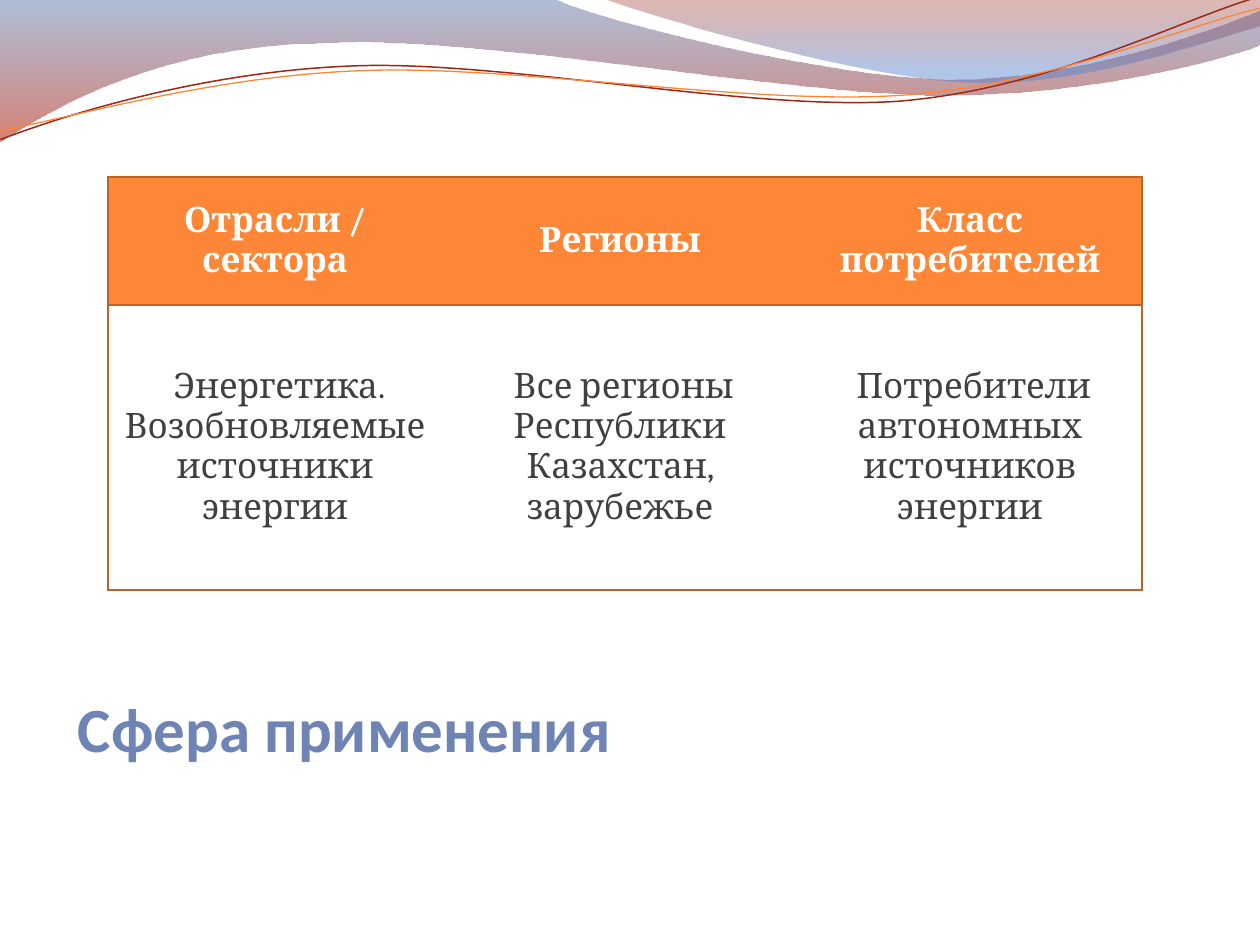
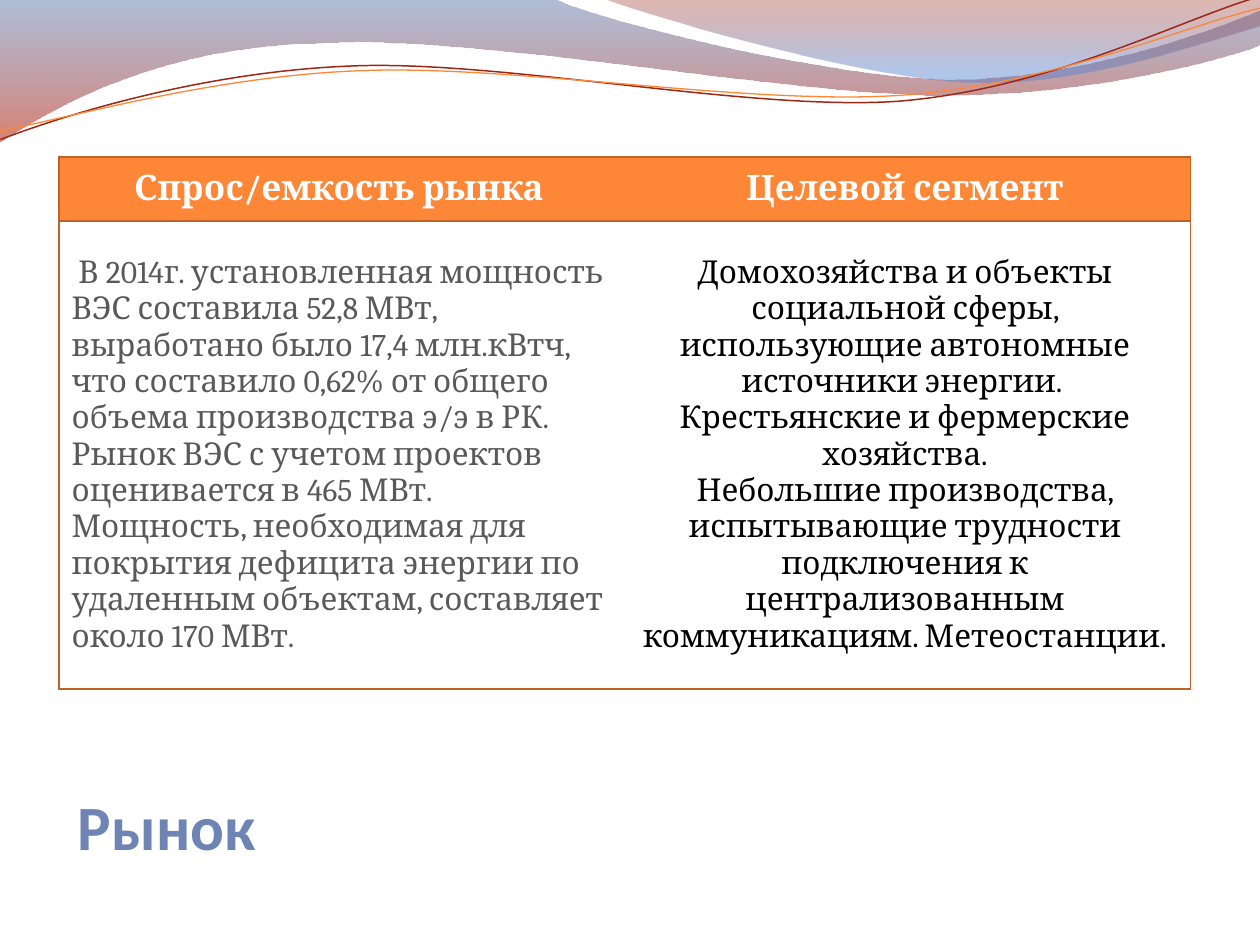
"""Build two slides on the field of application and the market of wind power."""
from lxml import etree
from pptx import Presentation
from pptx import util as u
from pptx.dml.color import RGBColor
from pptx.enum import text
from pptx.oxml import ns

PX = 914400 / 126

WHITE = RGBColor(0xFF, 0xFF, 0xFF)
BLACK = RGBColor(0x00, 0x00, 0x00)
DARK_GREY = RGBColor(0x40, 0x40, 0x40)
MID_GREY = RGBColor(0x59, 0x59, 0x59)
ORANGE = RGBColor(0xFE, 0x86, 0x37)
BORDER = RGBColor(0xBE, 0x63, 0x26)
TITLE_BLUE = RGBColor(0x6E, 0x84, 0xB4)
BAND_BLUE = RGBColor(0x4F, 0x6E, 0xA8)
BAND_RED = RGBColor(0xB6, 0x1A, 0x00)
CREST_RED = RGBColor(0x95, 0x15, 0x00)
CREST_BLUE = RGBColor(0x56, 0x81, 0xD1)
DARK_STRAND = RGBColor(0x9E, 0x27, 0x13)

LEFT, CENTER = text.PP_ALIGN.LEFT, text.PP_ALIGN.CENTER
MIDDLE, BOTTOM = text.MSO_ANCHOR.MIDDLE, text.MSO_ANCHOR.BOTTOM

STRAND_TILT = 357.3
BAND = [
    [(0, 0)], [(554, -1)],
    [(600, 21), (837, 79), (955, 79)],
    [(1075, 79), (1207, 33), (1260, 11)],
    [(1261, 45)],
    [(1239, 55), (1096, 96), (940, 95)],
    [(784, 95), (481, 35), (324, 43)],
    [(163, 45), (58, 105), (-1, 142)],
]
CREST = [
    [(604, -1)],
    [(641, 14), (859, 78), (969, 82)],
    [(1079, 87), (1211, 40), (1260, 26)],
    [(1260, 0)],
]
DARK_CURVE = [
    [(-2, 110)],
    [(58, 90), (199, 52), (350, 53)],
    [(499, 53), (745, 117), (896, 114)],
    [(1049, 109), (1184, 45), (1260, 27)],
]
ORANGE_CURVE = [
    [(-2, 101)],
    [(57, 94), (207, 57), (357, 58)],
    [(509, 58), (750, 112), (902, 108)],
    [(1052, 104), (1187, 52), (1262, 38)],
]


def px(length):
    """Turn px into EMU."""
    return u.Emu(round(length * PX))


def bend_lines(outline, segments):
    """Merge each run of three lines into one cubic curve."""
    path = next(outline.element.iter(ns.qn("a:path")))
    lines = iter(path.findall(ns.qn("a:lnTo")))
    for segment in segments:
        run = [next(lines) for _ in segment]
        if len(run) == 3:
            curve = etree.Element(ns.qn("a:cubicBezTo"))
            run[0].addprevious(curve)
            for line in run:
                curve.append(line[0])
                path.remove(line)


def add_outline(slide, segments, close):
    """Draw an outline of straight and curved segments."""
    start, *corners = [(px(x), px(y)) for segment in segments for x, y in segment]
    builder = slide.shapes.build_freeform(*start)
    builder.add_line_segments(corners, close=close)
    outline = builder.convert_to_shape()
    bend_lines(outline, segments[1:])
    outline.shadow.inherit = False
    return outline


def add_wave(slide, segments, stops):
    """Fill a wave downwards with (position, colour, opacity) stops."""
    wave = add_outline(slide, segments, close=True)
    wave.line.fill.background()
    wave.fill.gradient()
    wave.fill.gradient_angle = 270
    for stop, (position, colour, _) in zip(wave.fill.gradient_stops, stops):
        stop.position = position
        stop.color.rgb = colour
    tints = wave.element.iter(ns.qn("a:srgbClr"))
    for tint, (_, _, opacity) in zip(tints, stops):
        etree.SubElement(tint, ns.qn("a:alpha"), val=str(opacity * 1000))


def add_strand(slide, segments, colour, width):
    """Draw a thin, slightly tilted open curve."""
    strand = add_outline(slide, segments, close=False)
    strand.rotation = STRAND_TILT
    strand.fill.background()
    strand.line.color.rgb = colour
    strand.line.width = u.Pt(width)


def add_header_art(slide):
    """Draw the waves that every slide carries at its top."""
    add_wave(slide, BAND, [(0, BAND_BLUE, 45), (1, BAND_RED, 55)])
    add_wave(slide, CREST, [(0, CREST_RED, 30), (0.8, CREST_BLUE, 45)])
    add_strand(slide, DARK_CURVE, DARK_STRAND, 0.85)
    add_strand(slide, ORANGE_CURVE, ORANGE, 0.75)


def write(frame, words, *, size, colour, font="Cambria", bold=False, align=LEFT):
    """Fill a text frame, one paragraph for each line of words."""
    frame.word_wrap = True
    for index, line in enumerate(words.split("\n")):
        paragraph = frame.add_paragraph() if index else frame.paragraphs[0]
        paragraph.alignment = align
        run = paragraph.add_run()
        run.text = line
        run.font.name = font
        run.font.size = u.Pt(size)
        run.font.bold = bold
        run.font.color.rgb = colour


def add_title(slide, words, left, top, width, height):
    """Add the slide title, set on the bottom of its box."""
    frame = slide.shapes.add_textbox(*map(px, (left, top, width, height))).text_frame
    frame.vertical_anchor = BOTTOM
    frame.margin_left = frame.margin_right = frame.margin_bottom = 0
    frame.margin_top = px(6)
    write(frame, words, size=36, colour=TITLE_BLUE, font="Calibri", bold=True)


def set_borders(cell, sides):
    """Draw the named sides of a cell and clear the others."""
    properties = cell._tc.get_or_add_tcPr()
    for side in "LRTB":
        edge = etree.SubElement(properties, ns.qn(f"a:ln{side}"), w=str(u.Pt(0.75)))
        if side in sides:
            fill = etree.SubElement(edge, ns.qn("a:solidFill"))
            etree.SubElement(fill, ns.qn("a:srgbClr"), val=str(BORDER))
        else:
            etree.SubElement(edge, ns.qn("a:noFill"))


def add_framed_table(slide, left, top, widths, heights, headings, entries):
    """Add a table of headings above entries of (words, format)."""
    frame = slide.shapes.add_table(
        2, len(widths), px(left), px(top), px(sum(widths)), px(sum(heights)))
    table = frame.table
    table.first_row = table.horz_banding = False
    for row, height in zip(table.rows, heights):
        row.height = px(height)
    heading_format = dict(size=20, colour=WHITE, bold=True, align=CENTER)
    for index, (width, heading, entry) in enumerate(zip(widths, headings, entries)):
        table.columns[index].width = px(width)
        sides = "TB" + "L" * (index == 0) + "R" * (index == len(widths) - 1)
        for row, (words, style) in enumerate([(heading, heading_format), entry]):
            cell = table.cell(row, index)
            cell.vertical_anchor = MIDDLE
            set_borders(cell, sides)
            if row == 0:
                cell.fill.solid()
                cell.fill.fore_color.rgb = ORANGE
            else:
                cell.fill.background()
            write(cell.text_frame, words, **style)


def add_slide(deck):
    """Add a blank slide with the shared header art."""
    slide = deck.slides.add_slide(deck.slide_layouts[6])
    add_header_art(slide)
    return slide


def add_application_slide(deck):
    """Show sectors, regions and consumers."""
    slide = add_slide(deck)
    add_title(slide, "Сфера применения", 78, 640, 1024, 125)
    entry_format = dict(size=20, colour=DARK_GREY, align=CENTER)
    fields = [
        " Энергетика. Возобновляемые источники энергии",
        " Все регионы Республики Казахстан, зарубежье",
        " Потребители автономных источников энергии",
    ]
    add_framed_table(
        slide, 108, 177, [334, 356, 344], [128, 285],
        ["Отрасли / сектора", "Регионы", "Класс потребителей"],
        [(field, entry_format) for field in fields])


def add_market_slide(deck):
    """Show market capacity and the target segment."""
    slide = add_slide(deck)
    add_title(slide, "Рынок", 78, 758, 1053, 105)
    demand = (
        " В 2014г. установленная мощность ВЭС составила 52,8 МВт, выработано было "
        "17,4 млн.кВтч, что составило 0,62% от общего объема производства э/э в РК.\n"
        "Рынок ВЭС с учетом проектов оценивается в 465 МВт.\n"
        "Мощность, необходимая для покрытия дефицита энергии по удаленным объектам, "
        "составляет около 170 МВт.")
    segment = (
        "Домохозяйства и объекты социальной сферы, использующие автономные "
        "источники энергии. \n"
        "Крестьянские и фермерские хозяйства.\n"
        "Небольшие производства, испытывающие трудности подключения к "
        "централизованным коммуникациям. Метеостанции.")
    add_framed_table(
        slide, 59, 157, [560, 572], [64, 468],
        ["Спрос/емкость рынка", "Целевой сегмент"],
        [(demand, dict(size=18, colour=MID_GREY)),
         (segment, dict(size=18, colour=BLACK, align=CENTER))])


def main():
    """Build and save the deck."""
    deck = Presentation()
    deck.slide_width, deck.slide_height = px(1260), px(945)
    add_application_slide(deck)
    add_market_slide(deck)
    deck.save("out.pptx")


if __name__ == "__main__":
    main()
